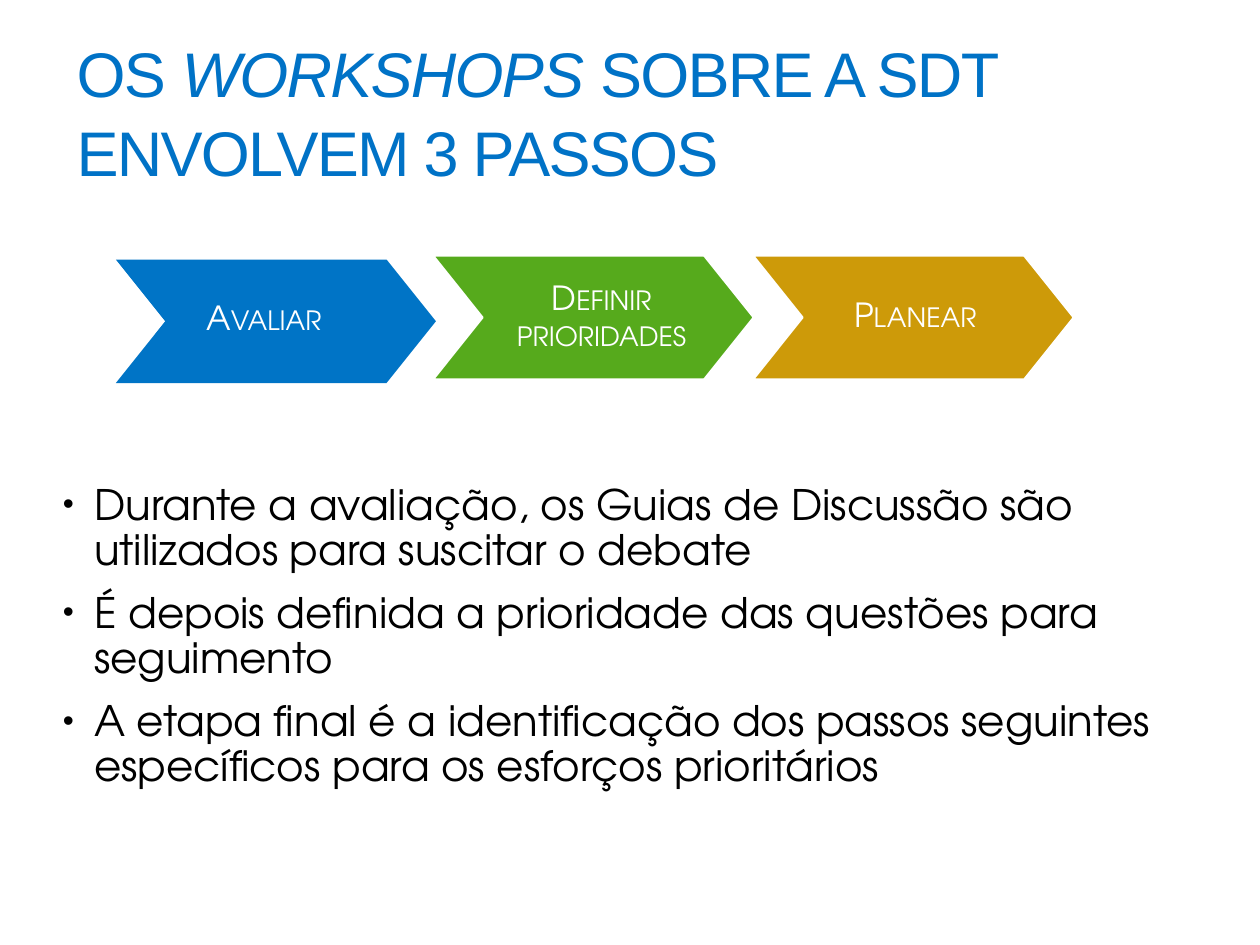
"""Build the slide that presents the three steps of the SDT workshops."""

from dataclasses import dataclass

import lxml.etree
import pptx
import pptx.dml.color
import pptx.enum.shapes
import pptx.enum.text
import pptx.oxml.ns
import pptx.slide
import pptx.text.text
import pptx.util

Inches = pptx.util.Inches
Pt = pptx.util.Pt
RGBColor = pptx.dml.color.RGBColor

TITLE_BLUE = RGBColor(0x00, 0x72, 0xC6)
STEP_BLUE = RGBColor(0x00, 0x74, 0xC6)
STEP_GREEN = RGBColor(0x56, 0xAA, 0x1C)
STEP_GOLD = RGBColor(0xCD, 0x9A, 0x09)
WHITE = RGBColor(0xFF, 0xFF, 0xFF)
BLACK = RGBColor(0x00, 0x00, 0x00)

TITLE_FONT = "Arial"
BODY_FONT = "TeX Gyre Adventor"
CHEVRON_WIDTH = 2.54
CHEVRON_HEIGHT = 0.98


@dataclass(frozen=True)
class Box:
    left: float
    top: float
    width: float
    height: float


@dataclass(frozen=True)
class Step:
    name: str
    color: RGBColor
    left: float
    top: float
    label: Box
    outlined: bool = True


TITLE_BOX = Box(0.51, 0.33, 9.2, 1.08)
BODY_BOX = Box(0.4, 3.79, 9.2, 2.73)
TITLE_PARTS = (
    ("OS ", False),
    ("WORKSHOPS ", True),
    ("SOBRE A SDT ENVOLVEM 3 PASSOS", False),
)
STEPS = (
    Step("Avaliar", STEP_BLUE, 0.92, 2.06, Box(1.3, 2.12, 1.59, 0.83), False),
    Step("Definir prioridades", STEP_GREEN, 3.44, 2.03, Box(3.73, 2.06, 2.09, 0.92)),
    Step("Planear", STEP_GOLD, 5.98, 2.03, Box(6.49, 2.05, 1.55, 0.92)),
)
BULLETS = (
    "Durante a avaliação, os Guias de Discussão são utilizados para suscitar o debate",
    "É depois definida a prioridade das questões para seguimento",
    "A etapa final é a identificação dos passos seguintes específicos para os esforços prioritários",
)


def add_text_frame(slide: pptx.slide.Slide, box: Box) -> pptx.text.text.TextFrame:
    """Add a wrapping text box and return its text frame."""
    shape = slide.shapes.add_textbox(
        Inches(box.left), Inches(box.top), Inches(box.width), Inches(box.height)
    )
    shape.text_frame.word_wrap = True
    return shape.text_frame


def format_run(run, font_name: str, size: float, color: RGBColor) -> None:
    """Set the typeface, size and colour of a run."""
    run.font.name = font_name
    run.font.size = Pt(size)
    run.font.color.rgb = color


def add_title(slide: pptx.slide.Slide) -> None:
    """Add the title with its italic word."""
    text_frame = add_text_frame(slide, TITLE_BOX)
    text_frame.vertical_anchor = pptx.enum.text.MSO_ANCHOR.MIDDLE
    paragraph = text_frame.paragraphs[0]
    paragraph.line_spacing = 1.05
    for text, italic in TITLE_PARTS:
        run = paragraph.add_run()
        run.text = text
        format_run(run, TITLE_FONT, 36, TITLE_BLUE)
        run.font.italic = italic
        run._r.get_or_add_rPr().set("spc", "-100")


def add_step(slide: pptx.slide.Slide, step: Step) -> None:
    """Add a chevron and its small-caps label."""
    chevron = slide.shapes.add_shape(
        pptx.enum.shapes.MSO_SHAPE.CHEVRON,
        Inches(step.left),
        Inches(step.top),
        Inches(CHEVRON_WIDTH),
        Inches(CHEVRON_HEIGHT),
    )
    chevron.adjustments[0] = 0.4
    chevron.shadow.inherit = False
    chevron.fill.solid()
    chevron.fill.fore_color.rgb = step.color
    if step.outlined:
        chevron.line.color.rgb = WHITE
        chevron.line.width = Pt(1)
    else:
        chevron.line.fill.background()

    text_frame = add_text_frame(slide, step.label)
    text_frame.vertical_anchor = pptx.enum.text.MSO_ANCHOR.MIDDLE
    text_frame.margin_left = text_frame.margin_right = Inches(0.15)
    text_frame.margin_top = text_frame.margin_bottom = Inches(0.15)
    text_frame.text = step.name
    paragraph = text_frame.paragraphs[0]
    paragraph.alignment = pptx.enum.text.PP_ALIGN.CENTER
    paragraph.line_spacing = 0.9
    run = paragraph.runs[0]
    format_run(run, BODY_FONT, 19, WHITE)
    run._r.get_or_add_rPr().set("cap", "small")


def add_bullet(paragraph) -> None:
    """Give a paragraph a hanging bullet at three quarters of the text size."""
    properties = paragraph._p.get_or_add_pPr()
    properties.set("marL", str(Inches(0.25)))
    properties.set("indent", str(Inches(-0.25)))
    for tag, name, value in (
        ("a:buSzPct", "val", "75000"),
        ("a:buFont", "typeface", TITLE_FONT),
        ("a:buChar", "char", "•"),
    ):
        element = lxml.etree.SubElement(properties, pptx.oxml.ns.qn(tag))
        element.set(name, value)


def add_body(slide: pptx.slide.Slide) -> None:
    """Add the bulleted explanation of the steps."""
    text_frame = add_text_frame(slide, BODY_BOX)
    text_frame.text = "\n".join(BULLETS)
    for index, paragraph in enumerate(text_frame.paragraphs):
        add_bullet(paragraph)
        paragraph.line_spacing = 0.9
        paragraph.space_before = Pt(10 if index else 0)
        format_run(paragraph.runs[0], BODY_FONT, 24, BLACK)


def main() -> None:
    """Build and save the presentation."""
    presentation = pptx.Presentation()
    presentation.slide_width = Inches(10)
    presentation.slide_height = Inches(7.5)
    slide = presentation.slides.add_slide(presentation.slide_layouts[6])
    add_body(slide)
    add_title(slide)
    for step in STEPS:
        add_step(slide, step)
    presentation.save("out.pptx")


if __name__ == "__main__":
    main()
